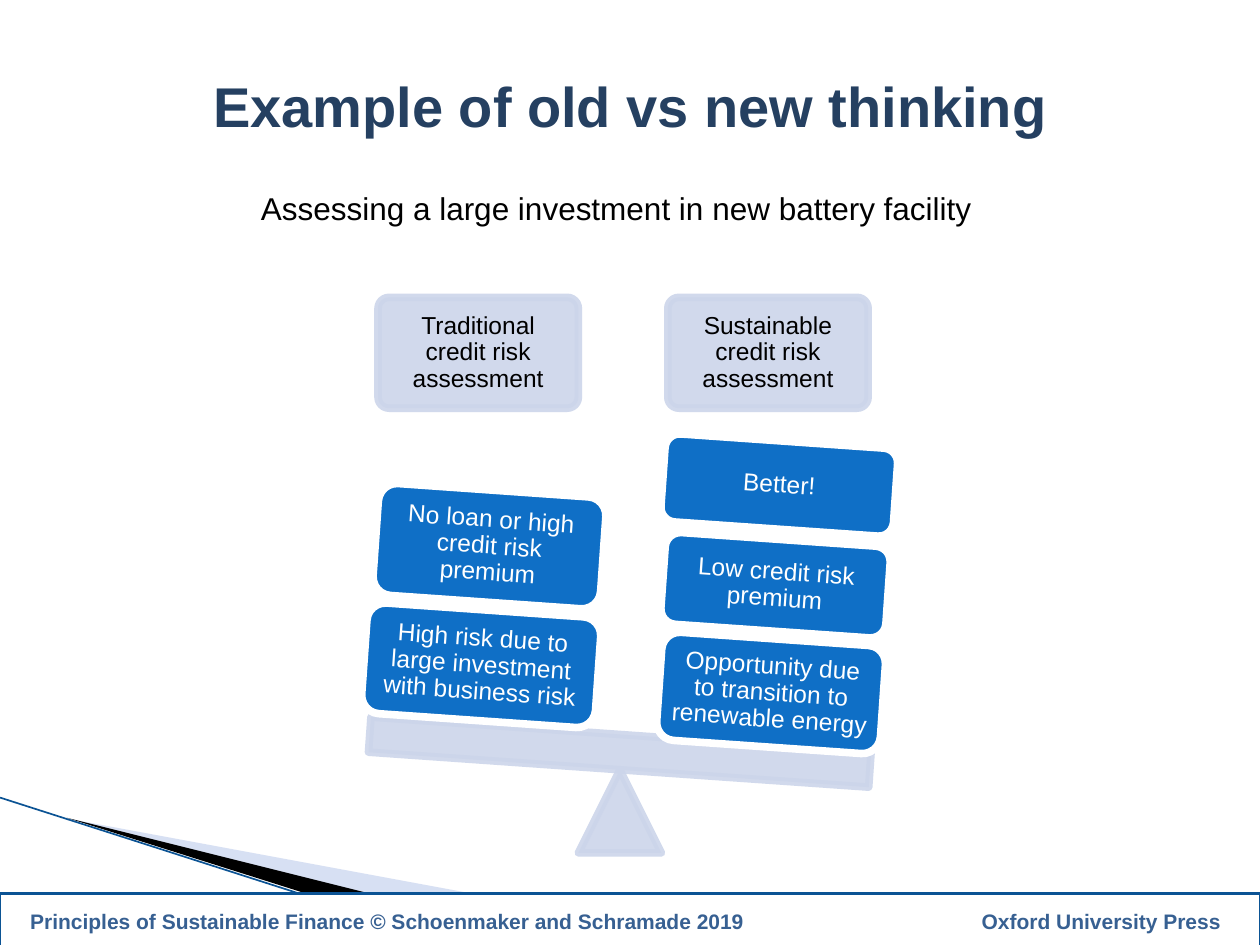
from dataclasses import dataclass

from lxml.etree import SubElement
from pptx import Presentation
from pptx.dml.color import RGBColor
from pptx.enum.shapes import MSO_CONNECTOR, MSO_SHAPE
from pptx.enum.text import MSO_ANCHOR, PP_ALIGN
from pptx.oxml.ns import qn
from pptx.util import Inches, Pt

COLS, ROWS = 100, 75


@dataclass(frozen=True)
class Theme:
    font: str = "Arial"
    title: str = "254061"
    footer: str = "376092"
    rule: str = "0B5394"
    wedge: str = "9DB2E1"
    pale: str = "CCD5EA"
    block: str = "0F6FC6"
    white: str = "FFFFFF"
    black: str = "000000"
    title_size: float = 32
    lead_size: float = 18
    block_size: float = 14
    footer_size: float = 12
    outline: float = 4.33


class Deck:
    """Holds the theme and the current slide, measured in columns and rows."""

    def __init__(self, theme):
        self.theme = theme
        self.prs = Presentation()
        self.prs.slide_width, self.prs.slide_height = Inches(10), Inches(7.5)
        self.s = self.prs.slides.add_slide(self.prs.slide_layouts[6])

    def x(self, col):
        return round(self.prs.slide_width * col / COLS)

    def y(self, row):
        return round(self.prs.slide_height * row / ROWS)

    def box(self, at):
        col, row, width, height = at
        return self.x(col), self.y(row), self.x(width), self.y(height)

    def paint(self, fill, color, opacity=100):
        fill.solid()
        fill.fore_color.rgb = RGBColor.from_string(color)
        if opacity < 100:
            clr = fill._xPr.find(qn("a:solidFill"))[0]
            SubElement(clr, qn("a:alpha"), val=str(opacity * 1000))

    def style(self, sp, fill, line=None, width=0, opacity=100):
        sp.shadow.inherit = False
        self.paint(sp.fill, fill, opacity)
        if line:
            self.paint(sp.line.fill, line, opacity)
            sp.line.width = Pt(width)
        else:
            sp.line.fill.background()

    def shape(self, kind, at, fill, line=None, width=0, opacity=100, turn=0):
        sp = self.s.shapes.add_shape(kind, *self.box(at))
        self.style(sp, fill, line, width, opacity)
        sp.rotation = turn
        return sp

    def label(self, sp, text, font, frame=None, para=None):
        """Fill a shape with one paragraph; return the paragraph."""
        tf = sp.text_frame
        p = tf.paragraphs[0]
        r = p.add_run()
        r.text = text
        font = {"name": self.theme.font, **font}
        r.font.color.rgb = RGBColor.from_string(font.pop("color"))
        frame = {"word_wrap": True, "vertical_anchor": MSO_ANCHOR.MIDDLE, **(frame or {})}
        for target, values in ((tf, frame), (p, para or {}), (r.font, font)):
            for name, value in values.items():
                setattr(target, name, value)
        return p

    def text(self, at, text, font, frame=None, para=None):
        sp = self.s.shapes.add_textbox(*self.box(at))
        self.label(sp, text, font, frame, para)

    def card(self, at, text, color, **look):
        """Rounded box with centred text."""
        t = self.theme
        sp = self.shape(MSO_SHAPE.ROUNDED_RECTANGLE, at, width=t.outline, **look)
        inset = Inches(0.06)
        sides = ("margin_left", "margin_top", "margin_right", "margin_bottom")
        self.label(sp, text, {"size": Pt(t.block_size), "color": color},
                   dict.fromkeys(sides, inset),
                   {"alignment": PP_ALIGN.CENTER, "line_spacing": 0.9})
        return sp

    def polygon(self, points, fill, opacity=100):
        first, *rest = [(self.x(c), self.y(r)) for c, r in points]
        builder = self.s.shapes.build_freeform(*first)
        builder.add_line_segments(rest)
        self.style(builder.convert_to_shape(), fill, opacity=opacity)

    def line(self, start, end, color, width):
        c = self.s.shapes.add_connector(
            MSO_CONNECTOR.STRAIGHT, self.x(start[0]), self.y(start[1]),
            self.x(end[0]), self.y(end[1]))
        self.paint(c.line.fill, color)
        c.line.width = Pt(width)
        SubElement(c._element.spPr, qn("a:effectLst"))

    def footer(self, at, left, right, tab):
        t = self.theme
        sp = self.shape(MSO_SHAPE.RECTANGLE, at, t.white, t.rule, 1.5)
        p = self.label(sp, f"{left}\t{right}",
                       {"size": Pt(t.footer_size), "bold": True, "color": t.footer},
                       {"margin_left": self.x(2.4), "margin_right": self.x(2)},
                       {"alignment": PP_ALIGN.LEFT})
        tabs = SubElement(p._p.get_or_add_pPr(), qn("a:tabLst"))
        SubElement(tabs, qn("a:tab"), pos=str(self.x(tab)), algn="r")


def main():
    t = Theme()
    d = Deck(t)

    d.polygon([(5.5, 65), (59.5, 75), (45.6, 75)], t.wedge, 40)
    d.polygon([(5.3, 64.9), (45.7, 75), (37.2, 75)], t.black)
    d.line((0, 63.3), (37.1, 75.2), t.rule, 0.95)

    d.text((18.5, 13.9, 71.2, 4.9), "Assessing a large investment in new battery facility",
           {"size": Pt(t.lead_size), "color": t.black},
           {"margin_left": Inches(0.22)}, {"line_spacing": 1.1})
    title = d.shape(MSO_SHAPE.RECTANGLE, (2.8, 5.2, 94.5, 7.1), t.white)
    d.label(title, "Example of old vs new thinking",
            {"size": Pt(t.title_size), "bold": True, "color": t.title},
            {"vertical_anchor": MSO_ANCHOR.TOP}, {"alignment": PP_ALIGN.CENTER})
    d.footer((0, 70.9, 100, 4.4),
             "Principles of Sustainable Finance © Schoenmaker and Schramade 2019",
             "Oxford University Press", tab=94.5)

    pale = {"fill": t.pale, "line": t.pale, "opacity": 90}
    for col, view in ((30, "Traditional"), (53, "Sustainable")):
        head = d.card((col, 23.6, 15.9, 8.8), f"{view} credit risk assessment", t.black, **pale)
        head.adjustments[0] = 0.1

    tilt = 4
    d.shape(MSO_SHAPE.ISOSCELES_TRIANGLE, (45.9, 61.1, 6.6, 6.6), width=t.outline, **pale)
    d.shape(MSO_SHAPE.RECTANGLE, (29.3, 58.3, 39.8, 2.8), width=t.outline, turn=tilt, **pale)

    weights = [
        ((52.3, 50.7, 17.8, 8.6), "Opportunity due to transition to renewable energy"),
        ((52.6, 42.8, 17.9, 7.3), "Low credit risk premium"),
        ((52.6, 35, 18.5, 7), "Better!"),
        ((28.9, 48.4, 18.6, 8.8), "High risk due to large investment with business risk"),
        ((29.8, 38.9, 18.1, 8.9), "No loan or high credit risk premium"),
    ]
    for at, text in weights:
        d.card(at, text, t.white, fill=t.block, line=t.white, turn=tilt)

    d.prs.save("out.pptx")


if __name__ == "__main__":
    main()
